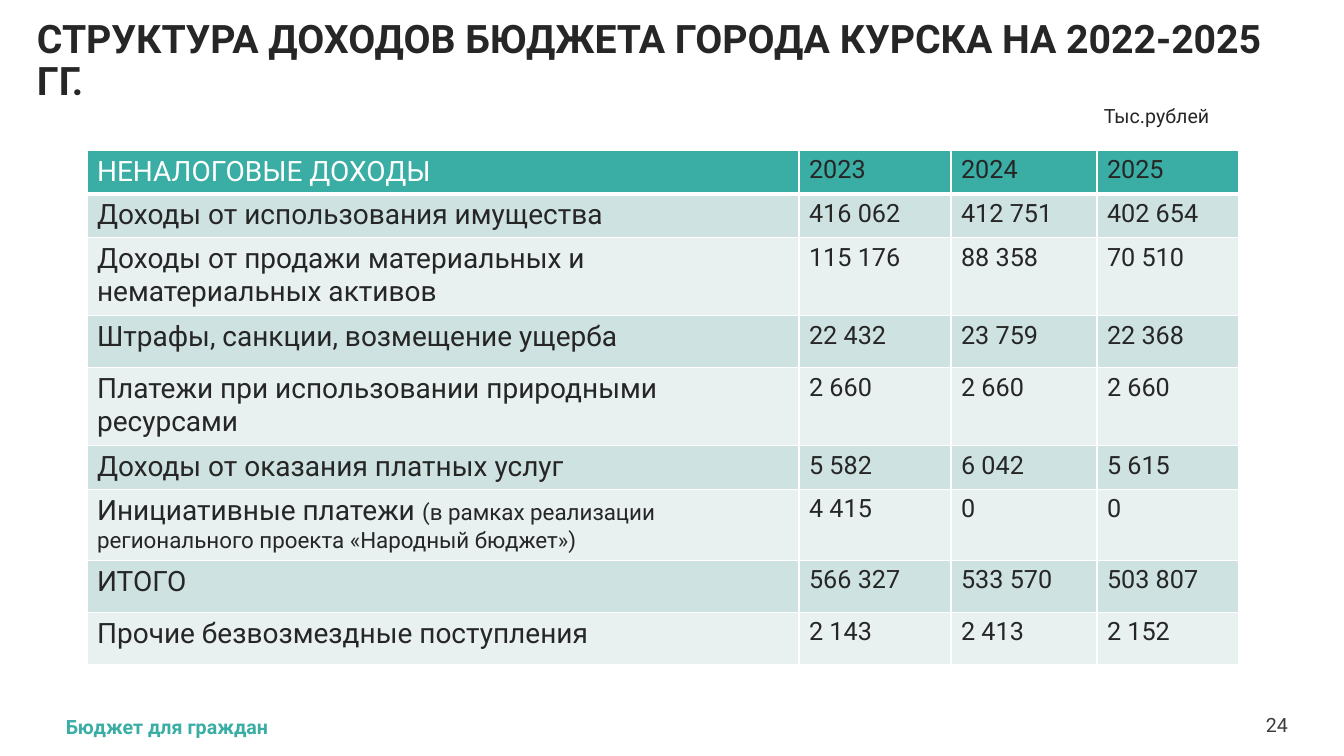
import pptx
import pptx.dml.color
import pptx.enum.text
import pptx.oxml
import pptx.oxml.ns
import pptx.util

EMU_PER_PX = 914400 / 100.8
FONT = "Roboto"
COLORS = {
    "teal": "3AADA5",
    "band_dark": "CEE3E1",
    "band_light": "E8F1F0",
    "ink": "262626",
    "gray": "3C3C3C",
    "white": "FFFFFF",
}
ANCHOR = pptx.enum.text.MSO_ANCHOR
ALIGN = pptx.enum.text.PP_ALIGN

COLUMN_WIDTHS = [712, 152, 146, 142]
ROW_HEIGHTS = [43, 44, 78, 52, 78, 43, 71, 52, 52]
INCOME = [
    ["НЕНАЛОГОВЫЕ ДОХОДЫ", "2023", "2024", "2025"],
    ["Доходы от использования имущества", "416 062", "412 751", "402 654"],
    ["Доходы от продажи материальных и нематериальных активов",
     "115 176", "88 358", "70 510"],
    ["Штрафы, санкции, возмещение ущерба", "22 432", "23 759", "22 368"],
    ["Платежи при использовании природными ресурсами",
     "2 660", "2 660", "2 660"],
    ["Доходы от оказания платных услуг", "5 582", "6 042", "5 615"],
    ["Инициативные платежи ", "4 415", "0", "0"],
    ["ИТОГО", "566 327", "533 570", "503 807"],
    ["Прочие безвозмездные поступления", "2 143", "2 413", "2 152"],
]
INITIATIVE_ROW = 6
INITIATIVE_NOTE = "(в рамках реализации регионального проекта «Народный бюджет»)"


def px(length):
    return pptx.util.Emu(round(length * EMU_PER_PX))


def rgb(name):
    return pptx.dml.color.RGBColor.from_string(COLORS[name])


def style_font(font, size, color, bold=False):
    font.name = FONT
    font.size = pptx.util.Pt(size)
    font.bold = bold
    font.color.rgb = rgb(color)


def add_label(slide, box, text, size, color, bold=False, insets=(10, 5, 10, 5),
              anchor=ANCHOR.TOP, align=ALIGN.LEFT, line_spacing=1.0):
    """Add a one-paragraph text box; box and insets are in px."""
    frame = slide.shapes.add_textbox(*map(px, box)).text_frame
    frame.word_wrap = True
    frame.vertical_anchor = anchor
    (frame.margin_left, frame.margin_top,
     frame.margin_right, frame.margin_bottom) = map(px, insets)
    paragraph = frame.paragraphs[0]
    paragraph.text = text
    paragraph.alignment = align
    paragraph.line_spacing = line_spacing
    style_font(paragraph.font, size, color, bold)


def set_borders(cell, widths):
    """Draw white cell borders; widths maps a side (L, R, T, B) to points."""
    properties = cell._tc.get_or_add_tcPr()
    for side, width in widths.items():
        properties.append(pptx.oxml.parse_xml(
            f'<a:ln{side} {pptx.oxml.ns.nsdecls("a")} w="{pptx.util.Pt(width)}">'
            f'<a:solidFill><a:srgbClr val="{COLORS["white"]}"/></a:solidFill>'
            f'</a:ln{side}>'))


def fill_cell(cell, text, size, color, background, widths):
    set_borders(cell, widths)
    cell.fill.solid()
    cell.fill.fore_color.rgb = rgb(background)
    paragraph = cell.text_frame.paragraphs[0]
    paragraph.text = text
    style_font(paragraph.font, size, color)


def add_income_table(slide):
    table = slide.shapes.add_table(
        len(INCOME), len(COLUMN_WIDTHS), px(87), px(150),
        px(sum(COLUMN_WIDTHS)), px(sum(ROW_HEIGHTS))).table
    table.first_row = False
    table.horz_banding = False
    for column, width in zip(table.columns, COLUMN_WIDTHS):
        column.width = px(width)
    for row, height in zip(table.rows, ROW_HEIGHTS):
        row.height = px(height)

    for r, values in enumerate(INCOME):
        if r == 0:
            background = "teal"
        else:
            background = "band_dark" if r % 2 else "band_light"
        widths = {"L": 1, "R": 1, "T": 3 if r == 1 else 1, "B": 3 if r == 0 else 1}
        for c, value in enumerate(values):
            color = "white" if r == c == 0 else "ink"
            fill_cell(table.cell(r, c), value, 18 if c else 20, color,
                      background, widths)

    note = table.cell(INITIATIVE_ROW, 0).text_frame.paragraphs[0].add_run()
    note.text = INITIATIVE_NOTE
    note.font.size = pptx.util.Pt(16)


def main():
    presentation = pptx.Presentation()
    presentation.slide_width = px(1344)
    presentation.slide_height = px(756)
    slide = presentation.slides.add_slide(presentation.slide_layouts[6])

    add_label(slide, (1263, 713, 25, 24), "24", 14, "gray",
              insets=(0, 0, 0, 0), anchor=ANCHOR.MIDDLE, align=ALIGN.RIGHT)
    add_label(slide, (57, 715, 1207, 24), "Бюджет для граждан", 14, "teal",
              bold=True, insets=(9, 0, 0, 0))
    add_label(slide, (27, 47, 1292, 77),
              "СТРУКТУРА ДОХОДОВ БЮДЖЕТА ГОРОДА КУРСКА НА 2022-2025 ГГ.",
              28, "ink", bold=True, insets=(10, 5, 10, 20),
              anchor=ANCHOR.BOTTOM, line_spacing=0.9)
    add_label(slide, (1094, 99, 173, 34), "Тыс.рублей", 14, "ink")
    add_income_table(slide)

    presentation.save("out.pptx")


if __name__ == "__main__":
    main()
